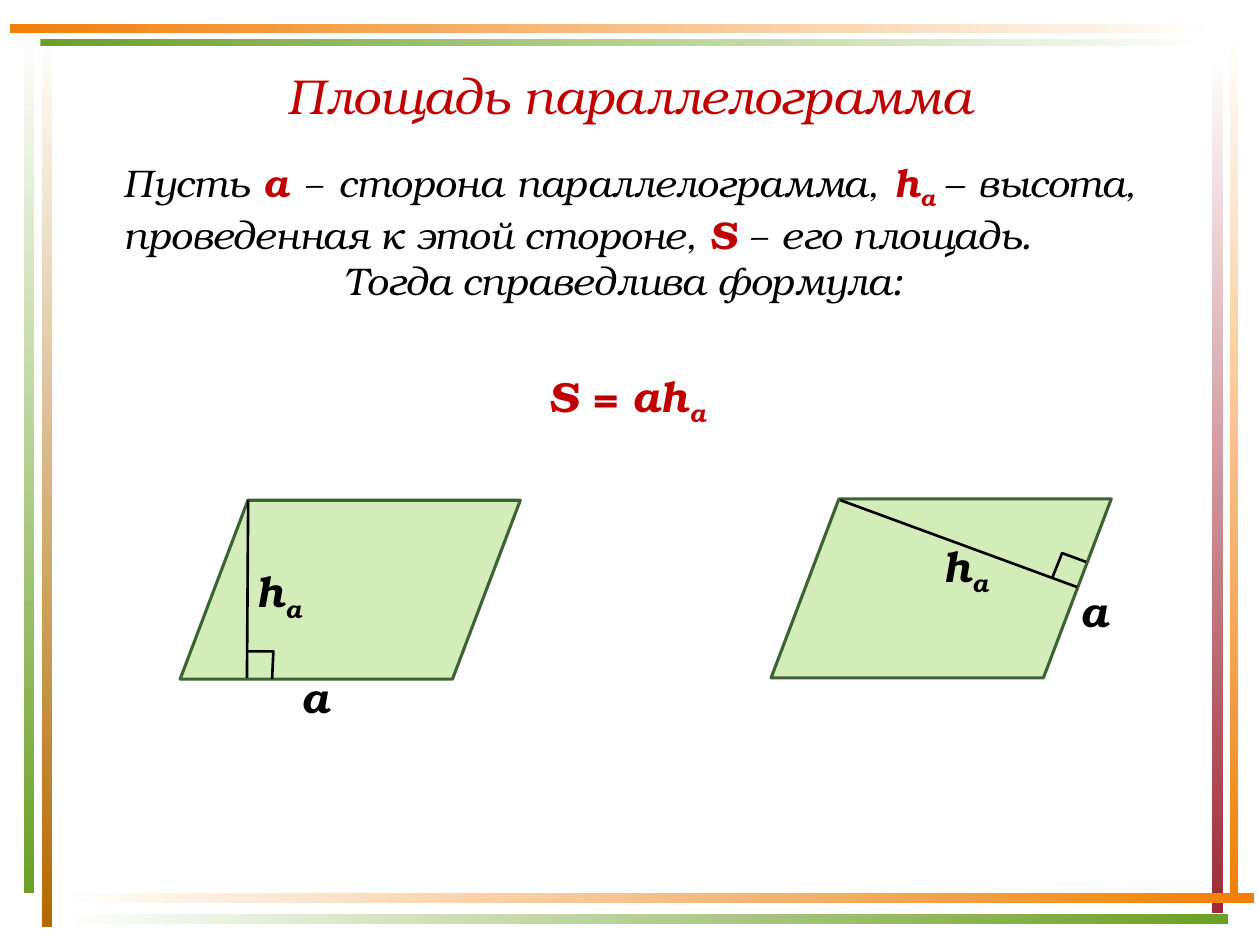
from dataclasses import dataclass

from lxml.etree import SubElement
from pptx import Presentation
from pptx.dml.color import RGBColor
from pptx.enum.shapes import MSO_CONNECTOR, MSO_SHAPE
from pptx.enum.text import MSO_ANCHOR, MSO_AUTO_SIZE, PP_ALIGN
from pptx.oxml.ns import qn
from pptx.util import Inches, Pt


@dataclass(frozen=True)
class Theme:
    font: str = "TeX Gyre Bonum"
    minus_font: str = "Vollkorn"
    title_size: int = 28
    body_size: int = 22
    label_size: int = 24
    black: str = "000000"
    white: str = "FFFFFF"
    accent: str = "C00000"
    shape_fill: str = "92D050"
    shape_line: str = "3B6432"
    orange: str = "F07F09"
    green: str = "6B9F25"
    brown: str = "B26B02"
    red: str = "9F2936"


theme = Theme()


def add_runs(p, runs, size, color=theme.black):
    """Add italic (text, style) runs; styles: accent, bold, sub, accent sub, minus."""
    for text, style in runs:
        r = p.add_run()
        r.text = text
        r.font.name = theme.minus_font if style == "minus" else theme.font
        r.font.size = Pt(size)
        r.font.italic = True
        r.font.bold = style not in ("", "minus")
        r.font.color.rgb = RGBColor.from_string(theme.accent if "accent" in style else color)
        if "sub" in style:
            r._r.get_or_add_rPr().set("baseline", "-25000")


def add_label(x, y, w, runs, wrap=False, align=PP_ALIGN.LEFT):
    tf = s.shapes.add_textbox(Inches(x), Inches(y), Inches(w), Inches(0.5)).text_frame
    tf.word_wrap = wrap
    tf.paragraphs[0].alignment = align
    add_runs(tf.paragraphs[0], runs, theme.label_size)


prs = Presentation()
prs.slide_width, prs.slide_height = Inches(10), Inches(7.5)
s = prs.slides.add_slide(prs.slide_layouts[1])

# Frame bars: left, top, width, height, start colour, end colour
bars = [
    (0.33, 0.28, 0.08, 7.08, theme.white, theme.brown),
    (0.19, 0.25, 0.08, 6.84, theme.white, theme.green),
    (9.76, 0.24, 0.07, 6.93, theme.white, theme.orange),
    (9.62, 0.42, 0.09, 6.83, theme.white, theme.red),
    (0.45, 7.09, 9.5, 0.08, theme.white, theme.orange),
    (0.45, 7.25, 9.3, 0.08, theme.white, theme.green),
    (0.32, 0.31, 9.32, 0.06, theme.green, theme.white),
    (0.08, 0.19, 9.56, 0.07, theme.orange, theme.white),
]
for x, y, w, h, start, end in bars:
    bar = s.shapes.add_shape(MSO_SHAPE.RECTANGLE, Inches(x), Inches(y), Inches(w), Inches(h))
    bar.shadow.inherit = False
    bar.line.fill.background()
    bar.fill.gradient()
    bar.fill.gradient_angle = 270 if h > w else 0
    for stop, color, position in zip(bar.fill.gradient_stops, (start, end), (0, 1)):
        stop.color.rgb = RGBColor.from_string(color)
        stop.position = position

# Title and statement
title, body = s.shapes.title, s.placeholders[1]
for sp, (x, y, w, h) in ((title, (0.62, 0.44, 8.75, 0.62)), (body, (0.88, 1.21, 8.24, 1.21))):
    sp.left, sp.top, sp.width, sp.height = Inches(x), Inches(y), Inches(w), Inches(h)
    sp.text_frame.auto_size = MSO_AUTO_SIZE.NONE
    sp.text_frame.word_wrap = True

title.text_frame.vertical_anchor = MSO_ANCHOR.MIDDLE
title.text_frame.paragraphs[0].alignment = PP_ALIGN.CENTER
add_runs(title.text_frame.paragraphs[0], [("Площадь параллелограмма", "")],
         theme.title_size, theme.accent)

tf = body.text_frame
statement, conclusion = tf.paragraphs[0], tf.add_paragraph()
for p, align in ((statement, PP_ALIGN.JUSTIFY), (conclusion, PP_ALIGN.CENTER)):
    p.alignment = align
    p.space_before = Pt(0)
    pPr = p._p.get_or_add_pPr()
    pPr.set("marL", "0")
    pPr.set("indent", "0")
    SubElement(pPr, qn("a:buNone"))
add_runs(statement, [
    ("Пусть ", ""), ("а ", "accent"), ("−", "minus"), (" сторона параллелограмма, ", ""),
    ("h", "accent"), ("а ", "accent sub"), ("– высота, проведенная к этой стороне, ", ""),
    ("S ", "accent"), ("−", "minus"), (" его площадь. ", ""),
], theme.body_size)
add_runs(conclusion, [("Тогда справедлива формула: ", "")], theme.body_size)

add_label(4.03, 2.89, 1.89, [("S = ah", "accent"), ("a", "accent sub")], True, PP_ALIGN.CENTER)

# Each figure: corner, height line, right-angle mark, positions of labels h and a
figures = [
    ((1.43, 3.97), ((1.97, 3.97), (1.96, 5.38)),
     ((1.96, 5.17), (2.17, 5.17), (2.16, 5.39)), (1.93, 4.44), (2.29, 5.28)),
    ((6.12, 3.96), ((6.67, 3.97), (8.55, 4.66)),
     ((8.35, 4.59), (8.43, 4.39), (8.62, 4.46)), (7.38, 4.24), (8.47, 4.6)),
]
for (x, y), (top, foot), corner, h_at, a_at in figures:
    figure = s.shapes.add_shape(MSO_SHAPE.PARALLELOGRAM, Inches(x), Inches(y),
                                Inches(2.7), Inches(1.42))
    figure.adjustments[0] = 0.379
    figure.shadow.inherit = False
    figure.fill.solid()
    figure.fill.fore_color.rgb = RGBColor.from_string(theme.shape_fill)
    color = figure._element.spPr.find(qn("a:solidFill")).find(qn("a:srgbClr"))
    SubElement(color, qn("a:alpha")).set("val", "40000")
    figure.line.color.rgb = RGBColor.from_string(theme.shape_line)
    figure.line.width = Pt(1.75)

    height = s.shapes.add_connector(MSO_CONNECTOR.STRAIGHT, *map(Inches, top + foot))
    first, *rest = [(Inches(px), Inches(py)) for px, py in corner]
    builder = s.shapes.build_freeform(*first)
    builder.add_line_segments(rest, close=False)
    mark = builder.convert_to_shape()
    mark.fill.background()
    mark.shadow.inherit = False
    for line in (height.line, mark.line):
        line.color.rgb = RGBColor.from_string(theme.black)
        line.width = Pt(1.5)
    SubElement(height._element.spPr, qn("a:effectLst"))

    add_label(*h_at, 0.59, [("h", "bold"), ("a", "bold sub")])
    add_label(*a_at, 0.43, [("a", "bold")])

prs.save("out.pptx")
